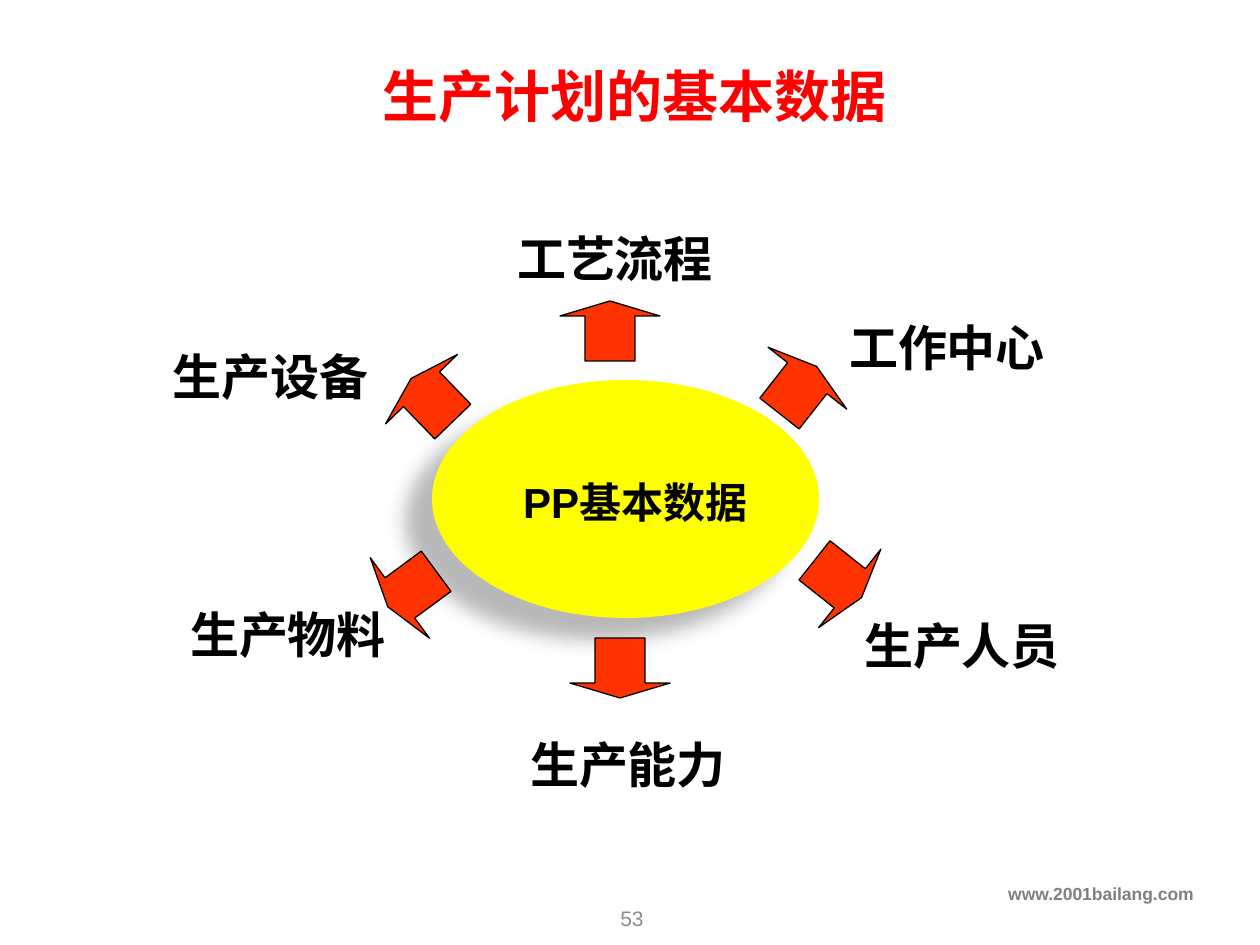
from pptx import Presentation
from pptx.dml.color import RGBColor as RGB
from pptx.enum.shapes import MSO_SHAPE as Kind
from pptx.enum.text import MSO_ANCHOR as Anchor, MSO_AUTO_SIZE as Fit, PP_ALIGN as Align
from pptx.util import Pt
from pptx.oxml import parse_xml
from pptx.oxml.ns import nsdecls

SCALE = 914400 / 126


def paint(target, color):
    if hasattr(target, "solid"):
        target.solid()
        target = target.fore_color
    target.rgb = RGB.from_string(color)


def write(text, box, size, color="000000", bold=True, align=Align.CENTER,
          anchor=Anchor.TOP, fit=Fit.NONE):
    frame = slide.shapes.add_textbox(*[round(n * SCALE) for n in box]).text_frame
    look = {"word_wrap": True, "vertical_anchor": anchor, "auto_size": fit}
    for name, value in look.items():
        setattr(frame, name, value)
    para = frame.paragraphs[0]
    para.alignment = align
    run = para.add_run()
    run.text = text
    for name, value in {"name": "Arial", "size": Pt(size), "bold": bold}.items():
        setattr(run.font, name, value)
    paint(run.font.color, color)


deck = Presentation()
deck.slide_width = round(1260 * SCALE)
deck.slide_height = round(945 * SCALE)
slide = deck.slides.add_slide(deck.slide_layouts[6])

write("www.2001bailang.com", (0, 877, 1206, 44), 10, "808080", align=Align.RIGHT)
write("生产计划的基本数据", (262, 55, 746, 80), 32, "FF0000")
write("53", (490, 893, 284, 50), 12, "8C8C8C", bold=False, anchor=Anchor.MIDDLE)

hub = slide.shapes.add_shape(Kind.OVAL, *[round(n * SCALE) for n in (432, 380, 387, 238)])
paint(hub.fill, "FFFF00")
hub.line.fill.background()
blur, dist, turn = Pt(11.8), Pt(19.7), 141 * 60000
hub.element.spPr.append(parse_xml(
    f'<a:effectLst {nsdecls("a")}>'
    f'<a:outerShdw blurRad="{blur}" dist="{dist}" dir="{turn}" algn="ctr" rotWithShape="0">'
    '<a:srgbClr val="000000"><a:alpha val="28000"/></a:srgbClr>'
    '</a:outerShdw></a:effectLst>'))
write("PP基本数据", (501, 470, 268, 63), 24, fit=Fit.SHAPE_TO_FIT_TEXT)

WIDE, HIGH = 100, 60
spokes = [
    ("工艺流程", (501, 222, 228), (610, 331), 0),
    ("工作中心", (828, 311, 238), (798, 390), 38.2),
    ("生产设备", (144, 340, 253), (432, 400), 316),
    ("生产物料", (174, 598, 228), (412, 589), 233.6),
    ("生产能力", (512, 728, 232), (620, 668), 180),
    ("生产人员", (848, 609, 228), (838, 579), 128.4),
]
for label, box, (x, y), angle in spokes:
    place = (x - WIDE / 2, y - HIGH / 2, WIDE, HIGH)
    arrow = slide.shapes.add_shape(Kind.UP_ARROW, *[round(n * SCALE) for n in place])
    arrow.adjustments[0] = 0.5
    arrow.adjustments[1] = 0.25
    arrow.rotation = angle
    arrow.shadow.inherit = False
    paint(arrow.fill, "FF3300")
    paint(arrow.line.fill, "000000")
    arrow.line.width = Pt(0.75)
    write(label, (*box, 72), 28, fit=Fit.SHAPE_TO_FIT_TEXT)

deck.save("out.pptx")
